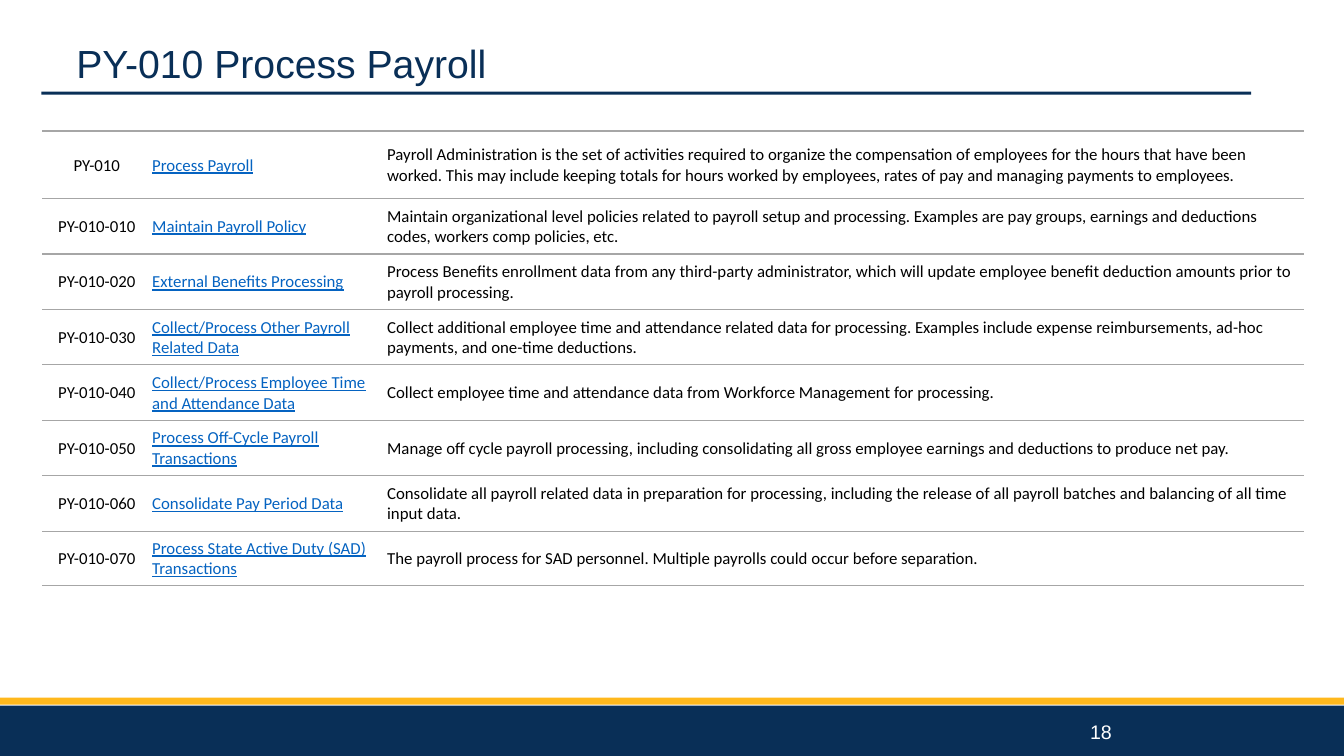
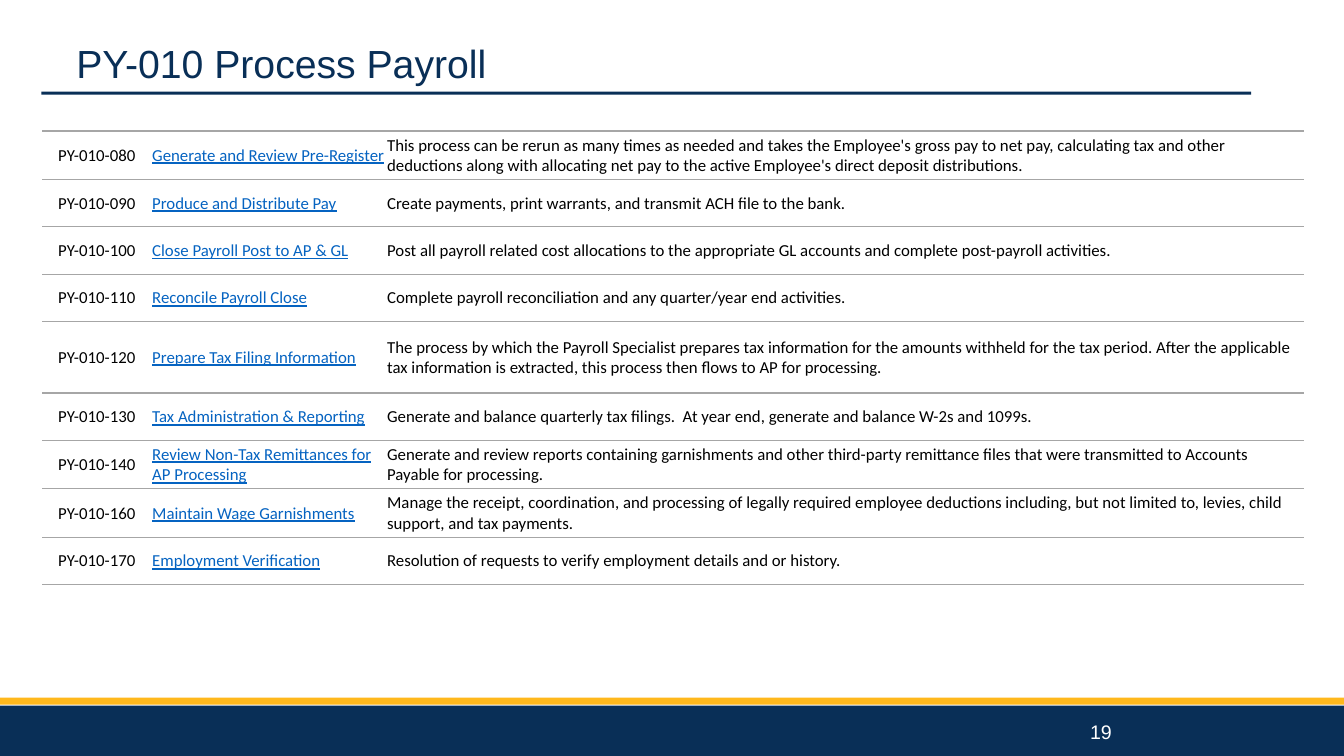
from lxml import etree
from pptx import Presentation
from pptx.dml.color import RGBColor
from pptx.enum import shapes, text
from pptx.oxml.ns import qn
from pptx.util import Inches, Pt

NAVY, GOLD, WHITE, BLACK = "092F57", "FFB81C", "FFFFFF", "000000"
LINK_BLUE, RULE_GRAY = "0563C1", "A6A6A6"

BANDS = [  # left, top, width, height, colour
    (0, 7, 13.33, 0.5, NAVY),
    (0, 6.92, 13.33, 0.07, GOLD),
    (0.41, 0.91, 12, 0.03, NAVY),
]
COLUMN_WIDTHS = [1.08, 2.33, 9.1]
TABLE_LEFT, TABLE_TOP = 0.42, 1.3

TITLE = "PY-010 Process Payroll"
SLIDES = [
    {
        "number": 18,
        "heights": [0.67] + [0.55] * 6 + [0.54],
        "rows": [
            ("PY-010", "Process Payroll",
             "Payroll Administration is the set of activities required to organize the compensation of employees "
             "for the hours that have been worked. This may include keeping totals for hours worked by employees, "
             "rates of pay and managing payments to employees."),
            ("PY-010-010", "Maintain Payroll Policy",
             "Maintain organizational level policies related to payroll setup and processing. Examples are pay "
             "groups, earnings and deductions codes, workers comp policies, etc."),
            ("PY-010-020", "External Benefits Processing",
             "Process Benefits enrollment data from any third-party administrator, which will update employee "
             "benefit deduction amounts prior to payroll processing."),
            ("PY-010-030", "Collect/Process Other Payroll Related Data",
             "Collect additional employee time and attendance related data for processing. Examples include "
             "expense reimbursements, ad-hoc payments, and one-time deductions."),
            ("PY-010-040", "Collect/Process Employee Time and Attendance Data",
             "Collect employee time and attendance data from Workforce Management for processing."),
            ("PY-010-050", "Process Off-Cycle Payroll Transactions",
             "Manage off cycle payroll processing, including consolidating all gross employee earnings and "
             "deductions to produce net pay."),
            ("PY-010-060", "Consolidate Pay Period Data",
             "Consolidate all payroll related data in preparation for processing, including the release of all "
             "payroll batches and balancing of all time input data."),
            ("PY-010-070", "Process State Active Duty (SAD) Transactions",
             "The payroll process for SAD personnel. Multiple payrolls could occur before separation."),
        ],
    },
    {
        "number": 19,
        "heights": [0.48, 0.47, 0.47, 0.47, 0.71, 0.47, 0.48, 0.48, 0.47],
        "rows": [
            ("PY-010-080", "Generate and Review Pre-Register",
             "This process can be rerun as many times as needed and takes the Employee's gross pay to net pay, "
             "calculating tax and other deductions along with allocating net pay to the active Employee's direct "
             "deposit distributions."),
            ("PY-010-090", "Produce and Distribute Pay",
             "Create payments, print warrants, and transmit ACH file to the bank."),
            ("PY-010-100", "Close Payroll Post to AP & GL",
             "Post all payroll related cost allocations to the appropriate GL accounts and complete post-payroll "
             "activities."),
            ("PY-010-110", "Reconcile Payroll Close",
             "Complete payroll reconciliation and any quarter/year end activities."),
            ("PY-010-120", "Prepare Tax Filing Information",
             "The process by which the Payroll Specialist prepares tax information for the amounts withheld for "
             "the tax period. After the applicable tax information is extracted, this process then flows to AP "
             "for processing."),
            ("PY-010-130", "Tax Administration & Reporting",
             "Generate and balance quarterly tax filings.  At year end, generate and balance W-2s and 1099s."),
            ("PY-010-140", "Review Non-Tax Remittances for AP Processing",
             "Generate and review reports containing garnishments and other third-party remittance files that "
             "were transmitted to Accounts Payable for processing."),
            ("PY-010-160", "Maintain Wage Garnishments",
             "Manage the receipt, coordination, and processing of legally required employee deductions "
             "including, but not limited to, levies, child support, and tax payments."),
            ("PY-010-170", "Employment Verification",
             "Resolution of requests to verify employment details and or history."),
        ],
    },
]
COLUMN_FORMATS = [
    {"align": text.PP_ALIGN.CENTER},
    {"color": LINK_BLUE, "underline": True},
    {},
]


def rgb(color):
    return RGBColor.from_string(color)


def write(frame, words, size=12, font="Calibri", color=BLACK, underline=False,
          align=text.PP_ALIGN.LEFT, spacing=1.0):
    frame.word_wrap = True
    paragraph = frame.paragraphs[0]
    paragraph.alignment, paragraph.line_spacing = align, spacing
    run = paragraph.add_run()
    run.text = words
    run.font.size, run.font.name = Pt(size), font
    run.font.underline = underline
    run.font.color.rgb = rgb(color)


def add_text(slide, box, words, **text_format):
    frame = slide.shapes.add_textbox(*map(Inches, box)).text_frame
    frame.vertical_anchor = text.MSO_ANCHOR.MIDDLE
    write(frame, words, **text_format)


def add_bands(slide):
    for *box, color in BANDS:
        band = slide.shapes.add_shape(shapes.MSO_SHAPE.RECTANGLE, *map(Inches, box))
        band.shadow.inherit = False
        band.fill.solid()
        band.fill.fore_color.rgb = rgb(color)
        band.line.fill.background()


def rule_cell(cell):
    """Draw gray rules above and below the cell and none at its sides."""
    properties = cell._tc.get_or_add_tcPr()
    for side in "LRTB":
        line = etree.SubElement(properties, qn(f"a:ln{side}"), w=str(Pt(1)))
        if side in "LR":
            etree.SubElement(line, qn("a:noFill"))
        else:
            fill = etree.SubElement(line, qn("a:solidFill"))
            etree.SubElement(fill, qn("a:srgbClr"), val=RULE_GRAY)


def add_process_table(slide, rows, heights):
    frame = slide.shapes.add_table(
        len(rows), len(COLUMN_WIDTHS), Inches(TABLE_LEFT), Inches(TABLE_TOP),
        Inches(sum(COLUMN_WIDTHS)), Inches(sum(heights)))
    table = frame.table
    table.first_row = table.horz_banding = False
    for column, width in zip(table.columns, COLUMN_WIDTHS):
        column.width = Inches(width)
    for table_row, height, row in zip(table.rows, heights, rows):
        table_row.height = Inches(height)
        for cell, words, cell_format in zip(table_row.cells, row, COLUMN_FORMATS):
            cell.margin_left = cell.margin_right = cell.margin_top = Inches(0.01)
            cell.margin_bottom = 0
            cell.vertical_anchor = text.MSO_ANCHOR.MIDDLE
            rule_cell(cell)
            cell.fill.background()
            write(cell.text_frame, words, **cell_format)


def main():
    presentation = Presentation()
    presentation.slide_width, presentation.slide_height = Inches(13.33), Inches(7.5)
    for content in SLIDES:
        slide = presentation.slides.add_slide(presentation.slide_layouts[6])
        add_bands(slide)
        add_text(slide, (0.66, -0.07, 11.5, 1.45), TITLE,
                 size=28, font="Arial", color=NAVY, spacing=0.9)
        add_process_table(slide, content["rows"], content["heights"])
        add_text(slide, (9.42, 7.06, 3, 0.4), str(content["number"]),
                 size=14, font="Arial", color=WHITE, align=text.PP_ALIGN.CENTER)
    presentation.save("out.pptx")


if __name__ == "__main__":
    main()
